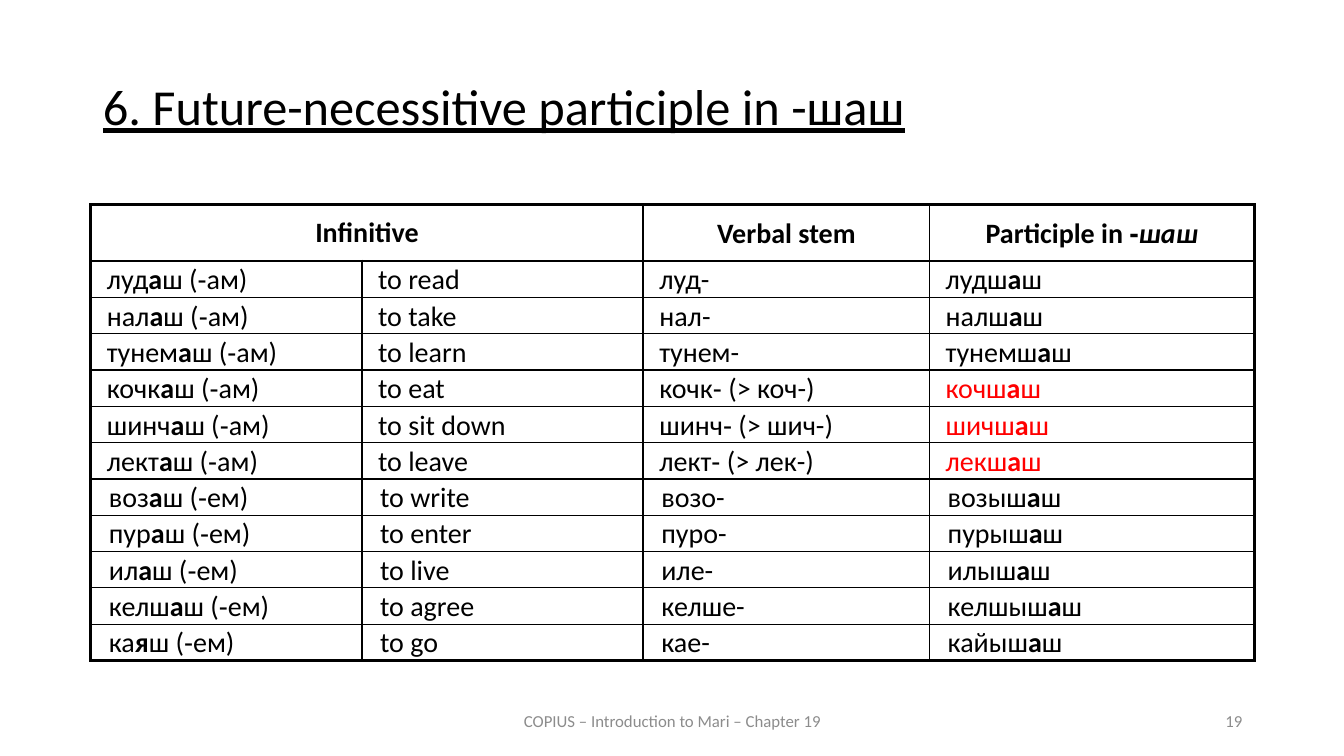
"""Build a slide with a table of Mari future-necessitive participles."""
from lxml import etree
from pptx import Presentation
from pptx import util as u
from pptx.dml.color import RGBColor
from pptx.enum import text
from pptx.oxml import ns

BLACK = RGBColor(0x00, 0x00, 0x00)
RED = RGBColor(0xFF, 0x00, 0x00)
GREY = RGBColor(0x8C, 0x8C, 0x8C)

HEADINGS = ["Infinitive", "", "Verbal stem", "Participle in ‑*шаш*"]
VERBS = [
    ("луд*а*ш (‑ам)", "to read", "луд-", "лудш*а*ш"),
    ("нал*а*ш (‑ам)", "to take", "нал-", "налш*а*ш"),
    ("тунем*а*ш (‑ам)", "to learn", "тунем-", "тунемш*а*ш"),
    ("кочк*а*ш (‑ам)", "to eat", "кочк‑ (> коч-)", "кочш*а*ш"),
    ("шинч*а*ш (‑ам)", "to sit down", "шинч‑ (> шич-)", "шичш*а*ш"),
    ("лект*а*ш (‑ам)", "to leave", "лект‑ (> лек-)", "лекш*а*ш"),
    ("воз*а*ш (‑ем)", "to write", "возо-", "возыш*а*ш"),
    ("пур*а*ш (‑ем)", "to enter", "пуро-", "пурыш*а*ш"),
    ("ил*а*ш (‑ем)", "to live", "иле-", "илыш*а*ш"),
    ("келш*а*ш (‑ем)", "to agree", "келше-", "келшыш*а*ш"),
    ("ка*я*ш (‑ем)", "to go", "кае-", "кайыш*а*ш"),
]
SHORTENED_STEMS = range(4, 7)
FIRST_EM_ROW = 7
COLUMN_WIDTHS = [2.69, 2.79, 2.84, 3.22]
HEADER_HEIGHT, VERB_HEIGHT = 0.56, 0.36
COLUMN_RULES = [2.25, 1, 1.5, 1.5, 2.25]
THICK, THIN = 2.25, 1


class Slide:
    def __init__(self, deck, font_name):
        self.page = deck.slides.add_slide(deck.slide_layouts[5])
        self.font_name = font_name

    def fill_paragraph(self, para, words, size, color, align, bold=False, emphasis="bold"):
        para.alignment = align
        font = para.font
        font.name, font.size, font.bold = self.font_name, u.Pt(size), bold
        font.color.rgb = color
        for index, piece in enumerate(words.split("*")):
            span = para.add_run()
            span.text = piece
            if index % 2:
                span.font.bold = bold or emphasis == "bold"
                span.font.italic = emphasis == "italic"

    def title(self, words, left, top, width, height):
        box = self.page.shapes.title
        box.left, box.top = u.Inches(left), u.Inches(top)
        box.width, box.height = u.Inches(width), u.Inches(height)
        frame = box.text_frame
        frame.auto_size = text.MSO_AUTO_SIZE.NONE
        frame.vertical_anchor = text.MSO_ANCHOR.TOP
        para = frame.paragraphs[0]
        para.line_spacing = 0.9
        self.fill_paragraph(para, words, 36, BLACK, text.PP_ALIGN.JUSTIFY)
        para.font.underline = True

    def footer(self, words, left, width, align):
        box = self.page.shapes.add_textbox(
            u.Inches(left), u.Inches(6.95), u.Inches(width), u.Inches(0.4))
        frame = box.text_frame
        frame.word_wrap = True
        frame.vertical_anchor = text.MSO_ANCHOR.MIDDLE
        self.fill_paragraph(frame.paragraphs[0], words, 12, GREY, align)

    def borders(self, cell, **widths):
        properties = cell._tc.get_or_add_tcPr()
        for index, (side, width) in enumerate(widths.items()):
            line = etree.Element(ns.qn(f"a:ln{side}"), w=str(u.Pt(width)))
            fill = etree.SubElement(line, ns.qn("a:solidFill"))
            etree.SubElement(fill, ns.qn("a:srgbClr"), val=str(BLACK))
            properties.insert(index, line)

    def cell(self, cell, words, row, column):
        header = row == 0
        roomy = header and column == 0
        side = 0.22 if roomy else 0.18 if row >= FIRST_EM_ROW else 0.16
        cell.margin_left = cell.margin_right = u.Inches(side)
        cell.margin_top = u.Inches(0.11 if roomy else 0.02)
        cell.margin_bottom = u.Inches(0.11 if roomy else 0)
        cell.vertical_anchor = text.MSO_ANCHOR.MIDDLE if header else text.MSO_ANCHOR.TOP
        cell.fill.background()
        thick_rules = (0, 1, FIRST_EM_ROW, len(VERBS) + 1)
        self.borders(
            cell,
            L=COLUMN_RULES[column],
            R=COLUMN_RULES[column + 1 + roomy],
            T=THICK if row in thick_rules else THIN,
            B=THICK if row + 1 in thick_rules else THIN)
        if words:
            color = RED if column == 3 and row in SHORTENED_STEMS else BLACK
            align = text.PP_ALIGN.CENTER if header else text.PP_ALIGN.JUSTIFY
            self.fill_paragraph(cell.text_frame.paragraphs[0], words, 20, color, align,
                                header, "italic" if header else "bold")

    def table(self, rows, left, top):
        height = HEADER_HEIGHT + VERB_HEIGHT * (len(rows) - 1)
        table = self.page.shapes.add_table(
            len(rows), len(COLUMN_WIDTHS), u.Inches(left), u.Inches(top),
            u.Inches(sum(COLUMN_WIDTHS)), u.Inches(height)).table
        table.first_row = table.horz_banding = False
        for column, width in zip(table.columns, COLUMN_WIDTHS):
            column.width = u.Inches(width)
        table.cell(0, 0).merge(table.cell(0, 1))
        for row, entries in enumerate(rows):
            table.rows[row].height = u.Inches(VERB_HEIGHT if row else HEADER_HEIGHT)
            for column, words in enumerate(entries):
                self.cell(table.cell(row, column), words, row, column)


def main():
    deck = Presentation()
    deck.slide_width, deck.slide_height = u.Inches(13.33), u.Inches(7.5)
    slide = Slide(deck, "Calibri")
    slide.title("6. Future-necessitive participle in -шаш", 0.92, 0.76, 11.5, 0.83)
    slide.table([HEADINGS, *VERBS], 0.9, 2.03)
    slide.footer("COPIUS – Introduction to Mari – Chapter 19", 4.42, 4.5, text.PP_ALIGN.CENTER)
    slide.footer("19", 9.42, 3, text.PP_ALIGN.RIGHT)
    deck.save("out.pptx")


if __name__ == "__main__":
    main()
